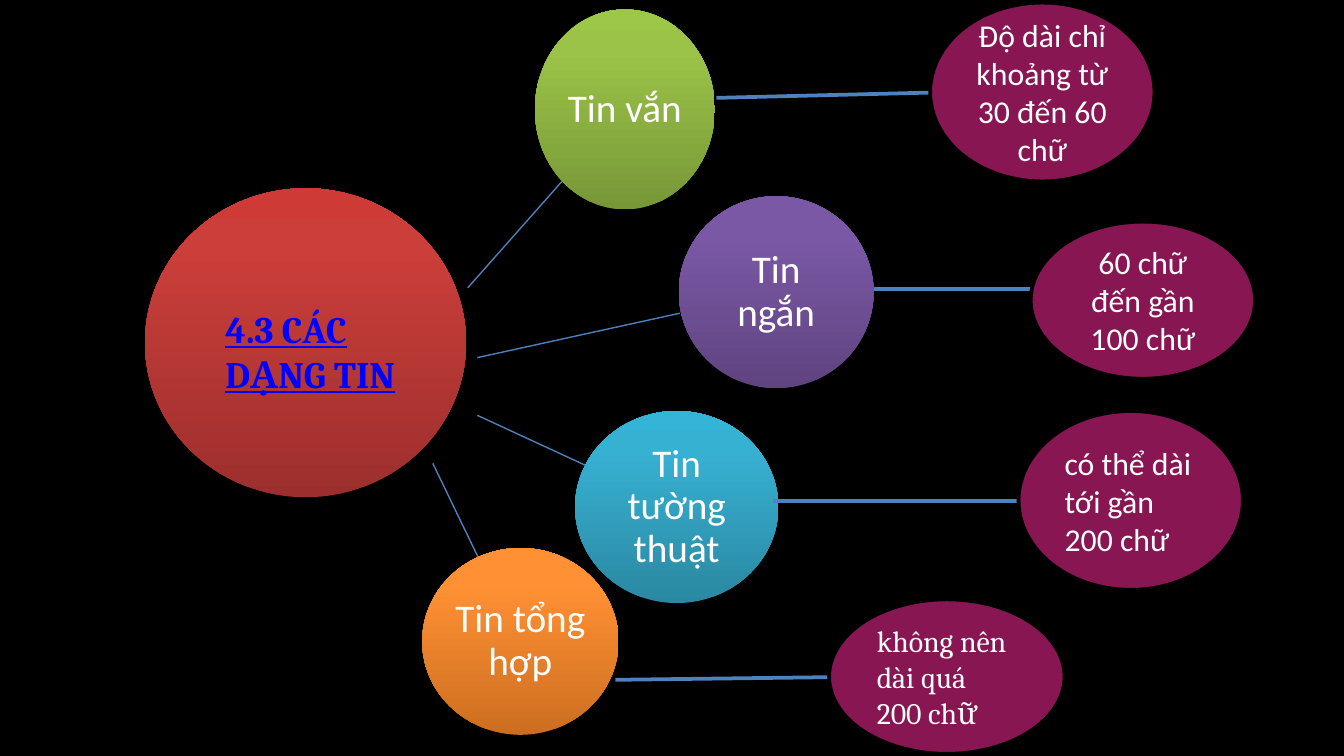
"""Build a slide mapping the four kinds of news item to their lengths."""
from copy import deepcopy
from dataclasses import dataclass

from lxml import etree
from pptx import Presentation
from pptx.dml.color import RGBColor
from pptx.enum.shapes import MSO_CONNECTOR, MSO_SHAPE
from pptx.enum.text import MSO_ANCHOR, PP_ALIGN
from pptx.oxml.ns import qn
from pptx.util import Cm, Pt

OVAL = MSO_SHAPE.OVAL
STRAIGHT = MSO_CONNECTOR.STRAIGHT
MIDDLE, TOP = MSO_ANCHOR.MIDDLE, MSO_ANCHOR.TOP
LEFT, CENTER = PP_ALIGN.LEFT, PP_ALIGN.CENTER


@dataclass(frozen=True)
class Theme:
    black: str = "000000"
    white: str = "FFFFFF"
    link: str = "0000FF"
    line: str = "4F81BD"
    note: str = "B31D6C"
    note_alpha: int = 76000
    red: tuple = ("9C2F2D", "CB3E3A", "CE3B37")
    green: tuple = ("779737", "9BC348", "9DC746")
    purple: tuple = ("5F4480", "7B58A6", "7C57A8")
    teal: tuple = ("2A88A2", "37B1D2", "34B4D6")
    orange: tuple = ("CC6E20", "FF9034", "FF9136")
    stops: tuple = (0, 0.8, 1)
    sans: str = "Calibri"
    serif: str = "Cambria"
    title_size: int = 20
    topic_size: int = 21
    note_size: int = 17
    small_size: int = 16
    thin: float = 0.75
    thick: float = 2


T = Theme()


def write(sp, text, size, font=T.sans, color=T.white, align=CENTER,
          anchor=MIDDLE, bold=False, underline=False, spacing=1.0, inset=None):
    tf = sp.text_frame
    tf.word_wrap = True
    tf.vertical_anchor = anchor
    if inset is not None:
        tf.margin_left = tf.margin_right = tf.margin_top = tf.margin_bottom = Cm(inset)
    p = tf.paragraphs[0]
    p.alignment = align
    p.line_spacing = spacing
    r = p.add_run()
    r.text = text
    r.font.name = font
    r.font.size = Pt(size)
    r.font.bold = bold
    r.font.underline = underline
    r.font.color.rgb = RGBColor.from_string(color)


def connect(ends, width):
    cxn = s.shapes.add_connector(STRAIGHT, *map(Cm, ends))
    cxn.line.color.rgb = RGBColor.from_string(T.line)
    cxn.line.width = Pt(width)
    etree.SubElement(cxn._element.spPr, qn("a:effectLst"))


prs = Presentation()
prs.slide_width, prs.slide_height = Cm(25.4), Cm(14.29)
s = prs.slides.add_slide(prs.slide_layouts[6])
s.background.fill.solid()
s.background.fill.fore_color.rgb = RGBColor.from_string(T.black)

branches = [
    (8.18, 8.76, 9.04, 10.54),
    (9.02, 7.85, 11.05, 8.79),
    (9.02, 6.76, 12.85, 5.92),
    (8.84, 5.44, 10.62, 3.43),
]
for ends in branches:
    connect(ends, T.thin)

circles = [
    ("", (2.74, 3.56, 6.07, 5.84), T.red),
    ("Tin vắn", (10.11, 0.18, 3.4, 3.78), T.green),
    ("Tin ngắn", (12.83, 3.71, 3.68, 3.63), T.purple),
    ("Tin tường thuật", (10.87, 7.77, 3.84, 3.63), T.teal),
    ("Tin tổng hợp", (7.98, 10.36, 3.71, 3.53), T.orange),
]
for text, box, colors in circles:
    sp = s.shapes.add_shape(OVAL, *map(Cm, box))
    sp.shadow.inherit = False
    sp.line.fill.background()
    sp.fill.gradient()
    sp.fill.gradient_angle = 90
    gs_list = sp._element.spPr.find(qn("a:gradFill")).find(qn("a:gsLst"))
    gs_list.append(deepcopy(gs_list[-1]))
    for stop, position, color in zip(sp.fill.gradient_stops, T.stops, colors):
        stop.position = position
        stop.color.rgb = RGBColor.from_string(color)
    if text:
        write(sp, text, T.topic_size, spacing=0.9, inset=0.03)

title = s.shapes.add_textbox(Cm(4.01), Cm(5.66), Cm(3.81), Cm(1.96))
write(title, "4.3 CÁC DẠNG TIN", T.title_size, font=T.serif, color=T.link,
      align=LEFT, anchor=TOP, bold=True, underline=True)

notes = [
    ("Độ dài chỉ khoảng từ 30 đến 60 chữ", (17.58, 0.05, 4.24, 3.38),
     (13.54, 1.85, 17.58, 1.75), T.note_size, T.sans, CENTER),
    ("60 chữ đến gần 100 chữ", (19.48, 4.19, 4.24, 2.97),
     (16.51, 5.46, 19.48, 5.46), T.note_size, T.sans, CENTER),
    ("có thể dài tới gần 200 chữ", (19.25, 7.77, 4.24, 3.38),
     (14.61, 9.47, 19.25, 9.47), T.note_size, T.sans, LEFT),
    ("không nên dài quá 200 chữ", (15.67, 11.33, 4.45, 2.92),
     (11.63, 12.85, 15.67, 12.8), T.small_size, T.serif, LEFT),
]
for text, box, ends, size, font, align in notes:
    connect(ends, T.thick)
    sp = s.shapes.add_shape(OVAL, *map(Cm, box))
    sp.shadow.inherit = False
    sp.fill.solid()
    sp.fill.fore_color.rgb = RGBColor.from_string(T.note)
    color = sp._element.spPr.find(qn("a:solidFill"))[0]
    etree.SubElement(color, qn("a:alpha"), val=str(T.note_alpha))
    sp.line.color.rgb = RGBColor.from_string(T.black)
    sp.line.width = Pt(T.thick)
    write(sp, text, size, font=font, align=align)

prs.save("out.pptx")
